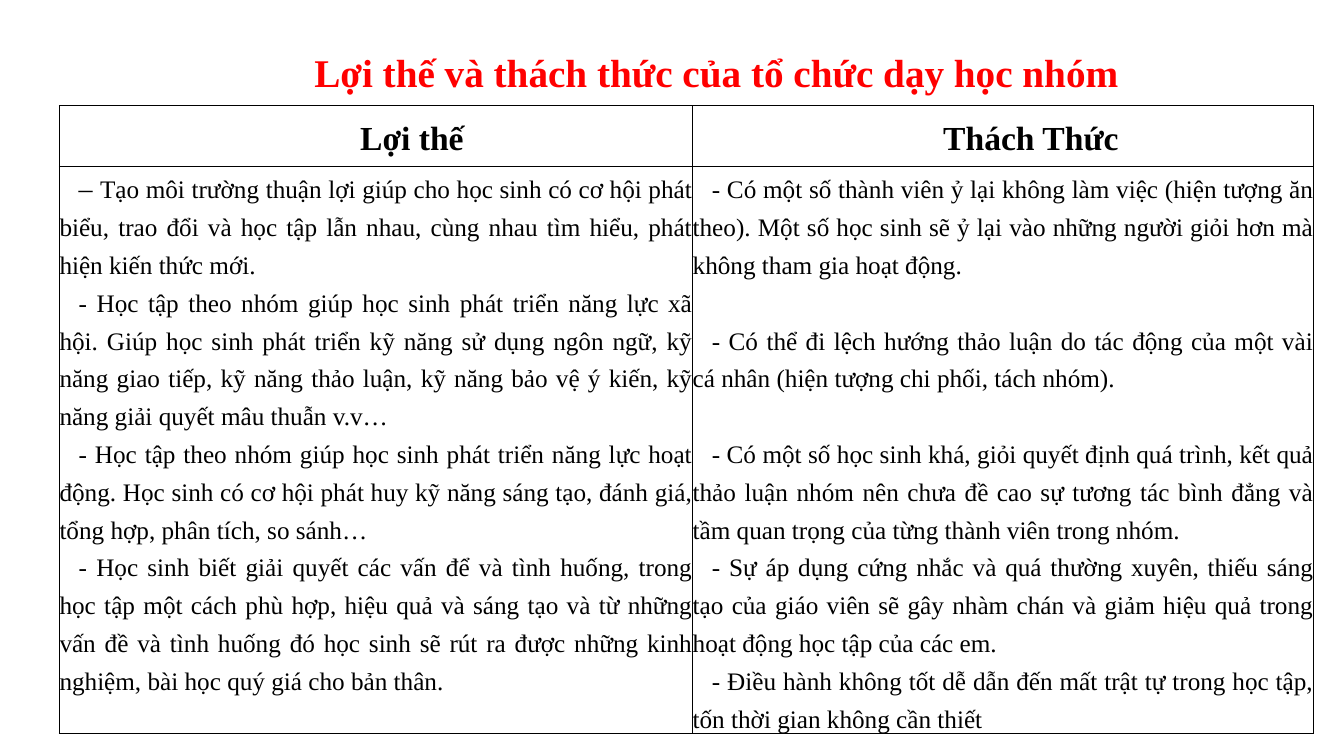
"""Build a slide that sets the gains of group teaching against its challenges."""
from pptx import Presentation, util as u
from pptx.dml import color
from pptx.enum import text
from pptx.oxml import parse_xml
from pptx.oxml.ns import nsdecls

FONT = "Times New Roman"
JUST, MID = text.PP_ALIGN.JUSTIFY, text.PP_ALIGN.CENTER


def paint(font, shade):
    font.color.rgb = color.RGBColor.from_string(shade)


def style(para, size, shade, bold, align, left, first):
    font = para.font
    font.name, font.size, font.bold = FONT, u.Pt(size), bold
    paint(font, shade)
    para.alignment = align
    props = para._p.get_or_add_pPr()
    props.set("marL", str(u.Inches(left)))
    props.set("indent", str(u.Inches(first)))


gains = [
    "Tạo môi trường thuận lợi giúp cho học sinh có cơ hội phát biểu, trao đổi và học tập lẫn nhau, cùng nhau tìm hiểu, phát hiện kiến thức mới.",
    "- Học tập theo nhóm giúp học sinh phát triển năng lực xã hội. Giúp học sinh phát triển kỹ năng sử dụng ngôn ngữ, kỹ năng giao tiếp, kỹ năng thảo luận, kỹ năng bảo vệ ý kiến, kỹ năng giải quyết mâu thuẫn v.v…",
    "- Học tập theo nhóm giúp học sinh phát triển năng lực hoạt động. Học sinh có cơ hội phát huy kỹ năng sáng tạo, đánh giá, tổng hợp, phân tích, so sánh…",
    "- Học sinh biết giải quyết các vấn để và tình huống, trong học tập một cách phù hợp, hiệu quả và sáng tạo và từ những vấn đề và tình huống đó học sinh sẽ rút ra được những kinh nghiệm, bài học quý giá cho bản thân.",
]
risks = [
    "- Có một số thành viên ỷ lại không làm việc (hiện tượng ăn theo). Một số học sinh sẽ ỷ lại vào những người giỏi hơn mà không tham gia hoạt động.",
    "- Có thể đi lệch hướng thảo luận do tác động của một vài cá nhân (hiện tượng chi phối, tách nhóm).",
    "- Có một số học sinh khá, giỏi quyết định quá trình, kết quả thảo luận nhóm nên chưa đề cao sự tương tác bình đẳng và tầm quan trọng của từng thành viên trong nhóm.",
    "- Sự áp dụng cứng nhắc và quá thường xuyên, thiếu sáng tạo của giáo viên sẽ gây nhàm chán và giảm hiệu quả trong hoạt động học tập của các em.",
    "- Điều hành không tốt dễ dẫn đến mất trật tự trong học tập, tốn thời gian không cần thiết",
]
columns = [("Lợi thế", 0.71, gains, 0), ("Thách Thức", 0.55, risks, 2)]
widths, heights = [6.28, 6.16], [0.6, 4.88]

deck = Presentation()
deck.slide_width, deck.slide_height = u.Inches(13.33), u.Inches(7.5)
slide = deck.slides.add_slide(deck.slide_layouts[6])

box = slide.shapes.add_textbox(*map(u.Inches, (2.46, 0.43, 10.57, 0.57)))
box.text_frame.word_wrap = True
title = box.text_frame.paragraphs[0]
title.text = "Lợi thế và thách thức của tổ chức dạy học nhóm"
style(title, 28, "FF0000", True, JUST, 0, 0.56)

area = map(u.Inches, (0.59, 1.05, sum(widths), sum(heights)))
table = slide.shapes.add_table(2, 2, *area).table
table.first_row = table.horz_banding = False
for row, height in zip(table.rows, heights):
    row.height = u.Inches(height)

for col, (head, left, points, gaps) in enumerate(columns):
    table.columns[col].width = u.Inches(widths[col])
    top, body = table.cell(0, col), table.cell(1, col)
    for cell in (top, body):
        cell.margin_left = cell.margin_right = 0
        cell.margin_top = cell.margin_bottom = 0
        for side in "LRTB":
            cell._tc.get_or_add_tcPr().append(parse_xml(
                f'<a:ln{side} {nsdecls("a")} w="12700"><a:solidFill>'
                f'<a:srgbClr val="000000"/></a:solidFill></a:ln{side}>'))
        cell.fill.background()

    top.vertical_anchor = text.MSO_ANCHOR.MIDDLE
    label = top.text_frame.paragraphs[0]
    label.text = head
    label.line_spacing = 1.15
    style(label, 24, "000000", True, MID, left, 0)

    frame = body.text_frame
    for num, point in enumerate(points):
        para = frame.add_paragraph() if num else frame.paragraphs[0]
        if not point.startswith("-"):
            dash = para.add_run()
            dash.text, dash.font.size = "– ", u.Pt(20)
        para.add_run().text = point
        para.line_spacing = u.Pt(27)
        para.space_after = u.Pt(27 if num < gaps else 0)
        style(para, 18, "000000", False, JUST, 0, 0.19)

deck.save("out.pptx")
